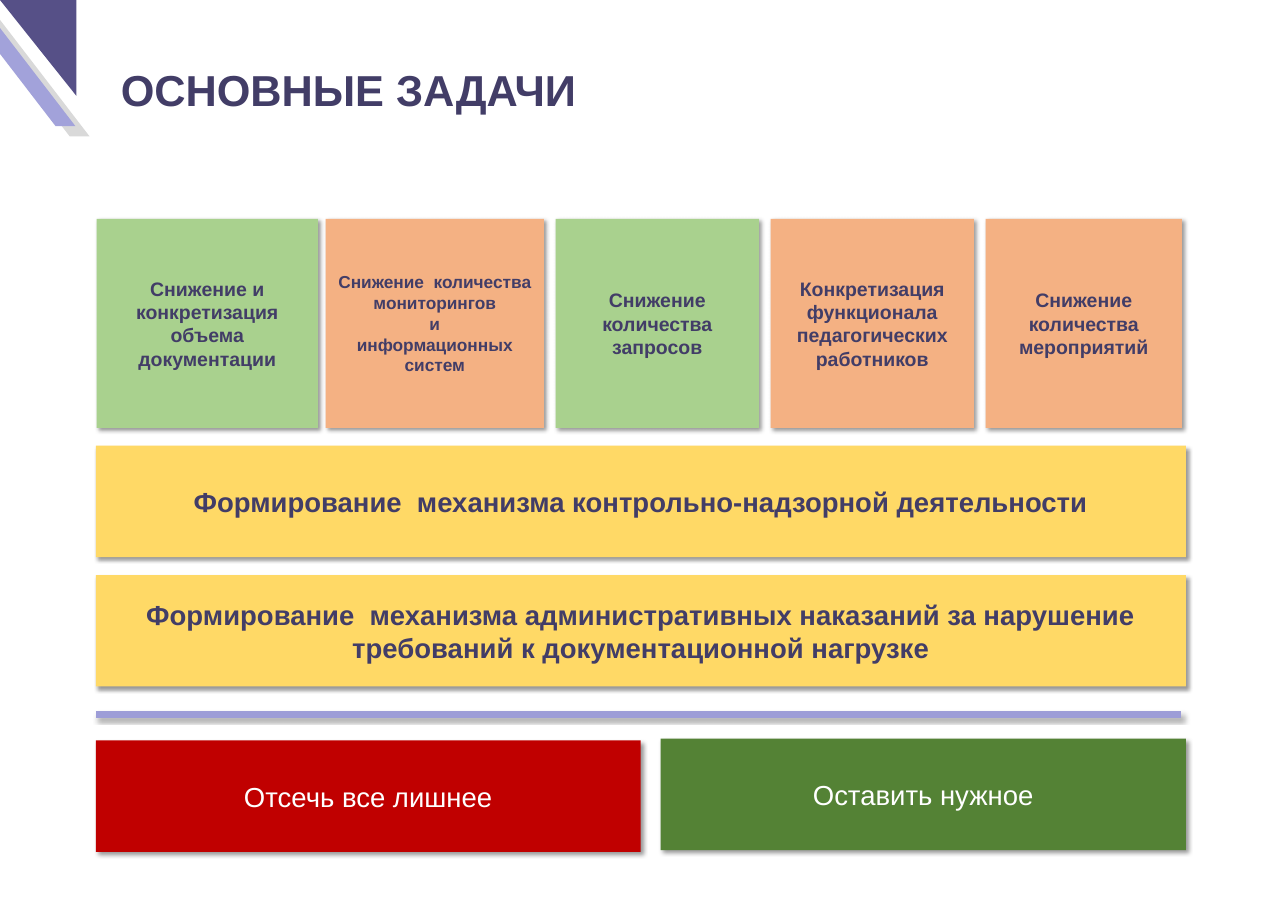
import dataclasses

import lxml.etree
import pptx
import pptx.dml.color
import pptx.enum.shapes
import pptx.enum.text
import pptx.oxml.ns
import pptx.util

Pt = pptx.util.Pt
Shape = pptx.enum.shapes.MSO_SHAPE
Anchor = pptx.enum.text.MSO_ANCHOR
Align = pptx.enum.text.PP_ALIGN
qn = pptx.oxml.ns.qn


@dataclasses.dataclass(frozen=True)
class Theme:
    font: str = "Arial"
    ink: str = "423D67"
    white: str = "FFFFFF"
    grey: str = "D9D9D9"
    lilac: str = "A2A2DA"
    violet: str = "565087"
    rule: str = "9D9DD7"
    green: str = "A9D18E"
    peach: str = "F4B183"
    gold: str = "FFD966"
    red: str = "C00000"
    moss: str = "548235"
    head: float = 40
    large: float = 25.4
    card: float = 18
    small: float = 16


THEME = Theme()

CARDS = [
    (0, 204.5, THEME.green, THEME.card, "Снижение и конкретизация объема документации"),
    (211.7, 201.6, THEME.peach, THEME.small,
     "Снижение  количества мониторингов\nи\nинформационных систем"),
    (424.1, 187.9, THEME.green, THEME.card, "Снижение количества запросов"),
    (622.8, 187.9, THEME.peach, THEME.card,
     "Конкретизация функционала педагогических работников"),
    (821.5, 181.4, THEME.peach, THEME.card, "Снижение количества мероприятий"),
]
BARS = [
    "Формирование  механизма контрольно-надзорной деятельности",
    "Формирование  механизма административных наказаний за нарушение "
    "требований к документационной нагрузке",
]


def color(code):
    return pptx.dml.color.RGBColor.from_string(code)


def write(shape, text, size=THEME.large, ink=THEME.ink, bold=True,
          align=Align.CENTER, anchor=Anchor.MIDDLE):
    frame = shape.text_frame
    frame.word_wrap = True
    frame.auto_size = pptx.enum.text.MSO_AUTO_SIZE.NONE
    frame.vertical_anchor = anchor
    frame.text = text
    for line in frame.paragraphs:
        line.alignment = align
        line.line_spacing = 1.0
        line.font.name = THEME.font
        line.font.size = Pt(size)
        line.font.bold = bold
        line.font.color.rgb = color(ink)


def shade(shape):
    effects = lxml.etree.SubElement(shape._element.spPr, qn("a:effectLst"))
    outer = lxml.etree.SubElement(
        effects, qn("a:outerShdw"), blurRad=str(Pt(4)), dist=str(Pt(3)),
        dir="2700000", algn="tl", rotWithShape="0")
    black = lxml.etree.SubElement(outer, qn("a:srgbClr"), val="000000")
    lxml.etree.SubElement(black, qn("a:alpha"), val="40000")


def block(slide, kind, box, fill):
    shape = slide.shapes.add_shape(kind, *map(Pt, box))
    shape.fill.solid()
    shape.fill.fore_color.rgb = color(fill)
    shape.line.fill.background()
    return shape


def tile(slide, box, fill, text, **style):
    shape = block(slide, Shape.RECTANGLE, box, fill)
    shade(shape)
    write(shape, text, **style)


def corner(slide, box):
    left, top, width, height = box
    for dx, dy, fill in [(-25.2, 9.4, THEME.grey), (-38.2, 0, THEME.lilac)]:
        band = block(slide, Shape.PARALLELOGRAM,
                     (left + dx, top + dy, 108, 116.6), fill)
        band.shadow.inherit = False
        band.adjustments[0] = 0.83
        band._element.spPr.find(qn("a:xfrm")).set("flipH", "1")
    wedge = block(slide, Shape.RIGHT_TRIANGLE, (left, top, width, height), THEME.violet)
    wedge.shadow.inherit = False
    wedge.rotation = 180


def header(slide, box, text):
    title = slide.shapes.title
    title.left, title.top, title.width, title.height = map(Pt, box)
    write(title, text, size=THEME.head, align=Align.LEFT, anchor=Anchor.TOP)
    title.text_frame.margin_left = 0


def cards(slide, box):
    left, top, _, height = box
    for dx, width, fill, size, text in CARDS:
        tile(slide, (left + dx, top, width, height), fill, text, size=size)


def bars(slide, box, gap=16.5):
    left, top, width, height = box
    tall = (height - gap) / len(BARS)
    for row, text in enumerate(BARS):
        tile(slide, (left, top + row * (tall + gap), width, tall), THEME.gold, text)


def footer(slide, box):
    left, top, width, height = box
    rule = slide.shapes.add_connector(
        pptx.enum.shapes.MSO_CONNECTOR.STRAIGHT,
        Pt(left), Pt(top), Pt(left + width - 5), Pt(top))
    rule.line.color.rgb = color(THEME.rule)
    rule.line.width = Pt(6)
    shade(rule)
    tall = height - 23.8
    style = {"ink": THEME.white, "bold": False}
    tile(slide, (left, top + 23.8, 503.3, tall), THEME.red,
         "Отсечь все лишнее", **style)
    tile(slide, (left + 522, top + 22.3, width - 522, tall), THEME.moss,
         "Оставить нужное", **style)


def main():
    deck = pptx.Presentation()
    deck.slide_width, deck.slide_height = Pt(1190.2), Pt(841.7)
    slide = deck.slides.add_slide(deck.slide_layouts[5])
    corner(slide, (0, 0, 70.6, 88.6))
    header(slide, (111.6, 54.7, 782.6, 55.4), "ОСНОВНЫЕ ЗАДАЧИ")
    cards(slide, (89.3, 202.3, 1002.9, 193))
    bars(slide, (88.6, 411.8, 1007.3, 222.5))
    footer(slide, (88.6, 660.2, 1007.3, 126.8))
    deck.save("out.pptx")


if __name__ == "__main__":
    main()
